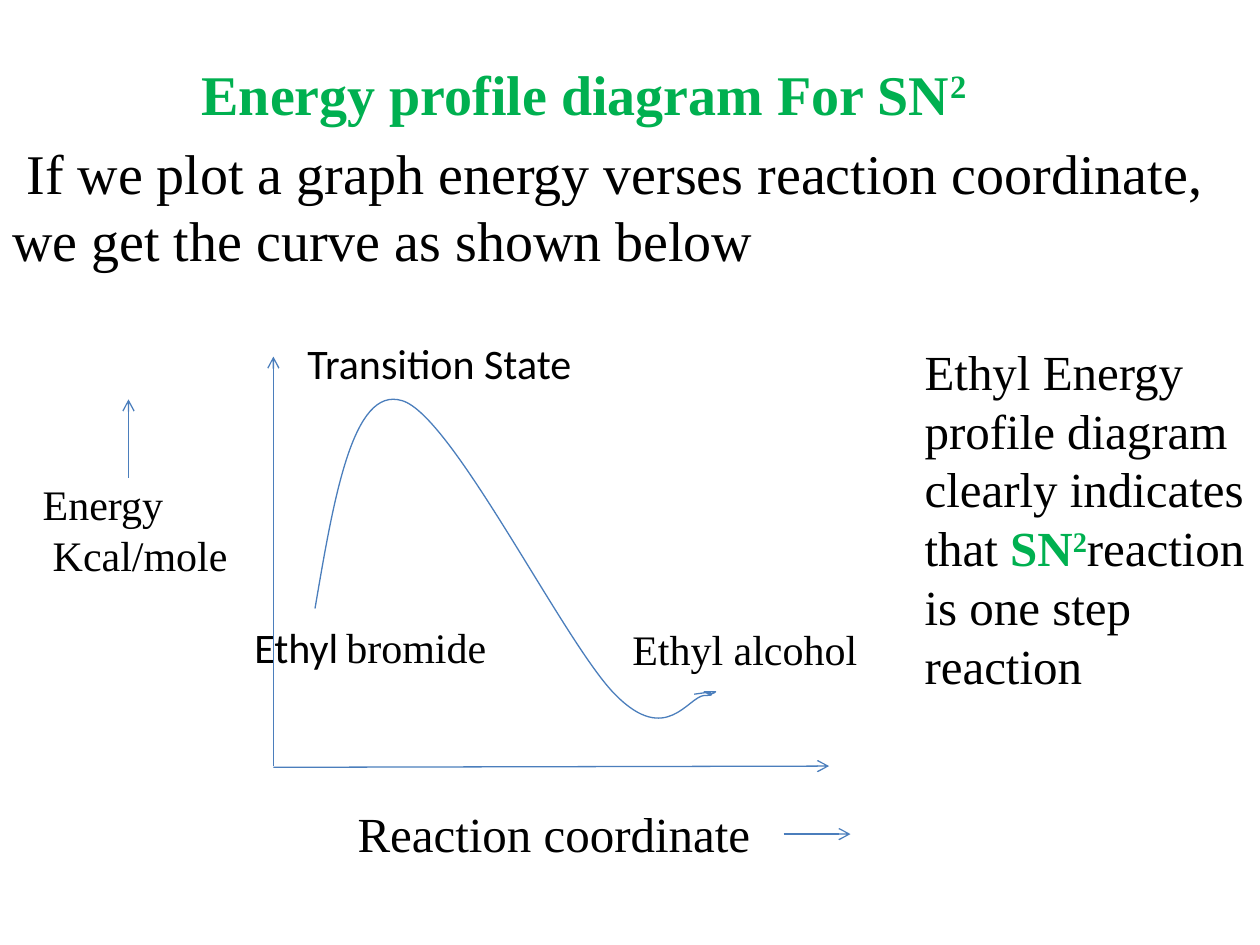
from lxml import etree
from pptx import Presentation
from pptx.dml.color import RGBColor
from pptx.enum.shapes import MSO_CONNECTOR as Link
from pptx.enum.text import MSO_ANCHOR as Anchor, MSO_AUTO_SIZE as Fit, PP_ALIGN as Align
from pptx.oxml.ns import qn
from pptx.util import Inches, Pt

SERIF = "Times New Roman"
BLACK, GREEN, BLUE = "000000", "00B050", "4B7EBC"
START = (2.5, 4.83)
CURVE = [
    ((2.65, 3.95), (2.8, 3.06), (3.19, 3.18)),
    ((3.59, 3.29), (4.49, 5.13), (4.89, 5.52)),
    ((5.29, 5.92), (5.46, 5.53), (5.59, 5.52)),
    ((5.71, 5.52), (5.61, 5.5), (5.62, 5.49)),
    ((5.64, 5.49), (5.67, 5.49), (5.68, 5.49)),
    ((5.68, 5.49), (5.66, 5.51), (5.64, 5.51)),
    ((5.63, 5.51), (5.58, 5.49), (5.59, 5.49)),
    ((5.59, 5.49), (5.67, 5.49), (5.66, 5.49)),
    ((5.65, 5.49), (5.58, 5.5), (5.51, 5.51)),
]


def tint(code):
    """Return the colour for a hex string."""
    return RGBColor.from_string(code)


def add_run(para, text, size=24, font=SERIF, color=BLACK, bold=False, sup=False):
    """Add one formatted run to a paragraph."""
    run = para.add_run()
    run.text = text
    run.font.size, run.font.name, run.font.bold = Pt(size), font, bold
    run.font.color.rgb = tint(color)
    if sup:
        run._r.get_or_add_rPr().set("baseline", "30000")


def fill_text(shape, text, wrap=True, fit=Fit.SHAPE_TO_FIT_TEXT, hang=0, **style):
    """Write a string or a list of (text, format) runs into a shape."""
    frame = shape.text_frame
    frame.word_wrap, frame.auto_size = wrap, fit
    frame.vertical_anchor = Anchor.TOP
    para = frame.paragraphs[0]
    para.alignment = Align.LEFT
    if hang:
        props = para._p.get_or_add_pPr()
        props.set("marL", str(Inches(hang)))
        props.set("indent", str(-Inches(hang)))
    for part, extra in [(text, {})] if isinstance(text, str) else text:
        add_run(para, part, **{**style, **extra})


def add_text(slide, box, text, **style):
    """Add a text box."""
    fill_text(slide.shapes.add_textbox(*map(Inches, box)), text, **style)


def set_title(slide, box, text, **style):
    """Place and fill the title placeholder."""
    title = slide.shapes.title
    title.left, title.top, title.width, title.height = map(Inches, box)
    fill_text(title, text, fit=Fit.NONE, **style)


def add_arrow(slide, x1, y1, x2, y2):
    """Draw a thin line with an open arrowhead at its end."""
    link = slide.shapes.add_connector(Link.STRAIGHT, *map(Inches, (x1, y1, x2, y2)))
    link.line.color.rgb, link.line.width = tint(BLUE), Pt(0.75)
    etree.SubElement(link.line._get_or_add_ln(), qn("a:tailEnd"), type="arrow")
    etree.SubElement(link._element.spPr, qn("a:effectLst"))


def add_point(node, point, left, top):
    """Add a point, measured from the shape's corner, to an outline step."""
    x, y = point
    etree.SubElement(node, qn("a:pt"), x=str(Inches(x - left)), y=str(Inches(y - top)))


def add_curve(slide, box, start, parts):
    """Draw an open curve of cubic Bezier parts within a box."""
    form = slide.shapes.build_freeform(*map(Inches, start))
    form.add_line_segments([tuple(map(Inches, part[-1])) for part in parts], close=False)
    shape = form.convert_to_shape()
    shape.left, shape.top, shape.width, shape.height = map(Inches, box)
    shape.shadow.inherit = False
    shape.fill.background()
    shape.line.color.rgb, shape.line.width = tint(BLUE), Pt(0.75)

    left, top, wide, high = box
    outline = next(shape._element.iter(qn("a:path")))
    outline.set("w", str(Inches(wide)))
    outline.set("h", str(Inches(high)))
    for step in list(outline):
        outline.remove(step)
    add_point(etree.SubElement(outline, qn("a:moveTo")), start, left, top)
    for part in parts:
        step = etree.SubElement(outline, qn("a:cubicBezTo"))
        for point in part:
            add_point(step, point, left, top)


def main():
    """Build the energy profile slide."""
    deck = Presentation()
    deck.slide_width, deck.slide_height = Inches(10), Inches(7.5)
    slide = deck.slides.add_slide(deck.slide_layouts[5])

    set_title(slide, (1.5, 0.42, 7.07, 1.18),
              [("Energy profile diagram For SN", {}), ("2", {"sup": True})],
              size=32, color=GREEN, bold=True)
    add_text(slide, (0, 1.05, 10, 1.18),
             " If we plot a graph energy verses reaction coordinate, "
             "we get the curve as shown below", size=32)

    add_arrow(slide, 2.17, 6.08, 2.17, 2.83)
    add_arrow(slide, 2.17, 6.09, 6.58, 6.08)
    add_text(slide, (2.74, 6.33, 3.4, 0.57), "Reaction coordinate", size=28, wrap=False)
    add_arrow(slide, 6.22, 6.62, 6.75, 6.62)
    add_text(slide, (0.24, 3.75, 1.68, 1.31), "Energy Kcal/mole", fit=Fit.NONE, hang=0.08)
    add_arrow(slide, 1.02, 3.79, 1.02, 3.17)

    add_curve(slide, (2.5, 3.17, 3.18, 2.53), START, CURVE)
    add_text(slide, (1.92, 4.88, 2.06, 0.5),
             [("Ethyl", {"font": "Calibri"}), (" ", {"font": "Calibri", "size": 20}),
              ("bromide", {})], wrap=False)
    add_text(slide, (2.34, 2.63, 2.32, 0.5), "Transition State", font="Calibri", wrap=False)
    add_text(slide, (4.92, 4.9, 2, 0.5), "Ethyl alcohol", wrap=False)

    mark = {"color": GREEN, "bold": True}
    add_text(slide, (7.24, 2.66, 2.76, 2.93),
             [("Ethyl Energy profile diagram clearly indicates that ", {}),
              ("SN", mark), ("2", {**mark, "sup": True}),
              ("reaction is one step reaction", {})], size=28)

    deck.save("out.pptx")


if __name__ == "__main__":
    main()
